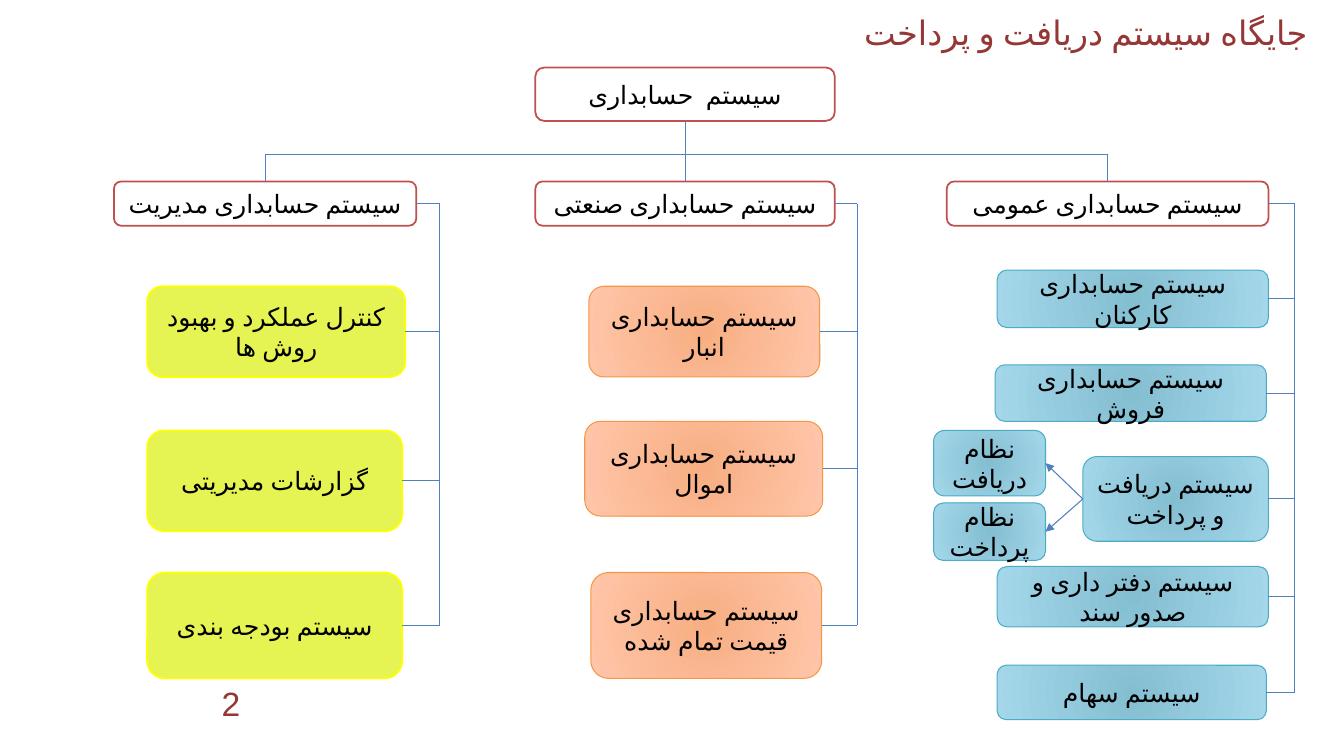
import lxml.etree
import pptx
import pptx.dml.color
import pptx.enum.shapes
import pptx.enum.text
import pptx.oxml.ns
import pptx.util
from pptx.util import Inches

qn = pptx.oxml.ns.qn
ALIGN = pptx.enum.text.PP_ALIGN
ANCHOR = pptx.enum.text.MSO_ANCHOR
TOP, LEFT, BOTTOM, RIGHT = range(4)

WHITE = (("FFFFFF",), "C0504D", 1.25)
BLUE = (("84BED1", "A4D7EA"), "4BACC6", 0.75)
ORANGE = (("F8AE82", "FFC6AA"), "F79646", 0.75)
YELLOW = (("E5F452",), "FFFF00", 1.25)

ROOT = ("سیستم  حسابداری", 5.31, 0.67, 2.97, 0.53)
BRANCHES = [
    (("سیستم حسابداری مدیریت", 1.13, 1.8, 3, 0.44), 4.36, YELLOW, [
        ("کنترل عملکرد و بهبود روش ها", 1.46, 2.84, 2.56, 0.9),
        ("گزارشات مدیریتی", 1.46, 4.27, 2.53, 1),
        ("سیستم بودجه بندی", 1.46, 5.68, 2.53, 1.05),
    ]),
    (("سیستم حسابداری صنعتی", 5.31, 1.8, 2.97, 0.44), 8.5, ORANGE, [
        ("سیستم حسابداری انبار", 5.84, 2.84, 2.29, 0.9),
        ("سیستم حسابداری اموال", 5.8, 4.18, 2.36, 0.94),
        ("سیستم حسابداری قیمت تمام شده", 5.86, 5.68, 2.29, 1.05),
    ]),
    (("سیستم حسابداری عمومی", 9.39, 1.8, 3.19, 0.44), 12.84, BLUE, [
        ("سیستم حسابداری کارکنان", 9.89, 2.68, 2.69, 0.57),
        ("سیستم حسابداری فروش", 9.87, 3.62, 2.69, 0.56),
        ("سیستم دریافت و پرداخت", 10.74, 4.53, 1.84, 0.84),
        ("سیستم دفتر داری و صدور سند", 9.89, 5.62, 2.69, 0.6),
        ("سیستم سهام", 9.89, 6.6, 2.67, 0.54),
    ]),
]
PAYMENT_PARTS = [
    ("نظام دریافت", 9.26, 4.27, 1.11, 0.65),
    ("نظام پرداخت", 9.26, 4.99, 1.11, 0.57),
]


def rgb(value):
    """Turn a hex string into a colour."""
    return pptx.dml.color.RGBColor.from_string(value)


def set_text(sp, text, size, font, color, align, rtl=True):
    """Write one formatted paragraph into a shape."""
    tf = sp.text_frame
    tf.word_wrap = True
    tf.text = text
    p = tf.paragraphs[0]
    p.alignment = align
    r = p.runs[0]
    r.font.size = pptx.util.Pt(size)
    r.font.name = font
    r.font.color.rgb = rgb(color)
    if rtl:
        p._p.get_or_add_pPr().set("rtl", "1")
        r._r.get_or_add_rPr().set("lang", "fa-IR")
    return tf


def set_fill(sp, colors):
    """Fill a shape with one colour, or radially from the first to the second."""
    if len(colors) == 1:
        sp.fill.solid()
        sp.fill.fore_color.rgb = rgb(colors[0])
        return
    sp.fill.gradient()
    for stop, color in zip(sp.fill.gradient_stops, colors):
        stop.color.rgb = rgb(color)
    grad = sp._element.spPr.find(qn("a:gradFill"))
    grad.remove(grad.find(qn("a:lin")))
    circle = lxml.etree.SubElement(grad, qn("a:path"), path="circle")
    lxml.etree.SubElement(circle, qn("a:fillToRect"), dict.fromkeys("ltrb", "50000"))


def add_box(s, item, style, font="Calibri"):
    """Add a rounded box with centred text."""
    text, *place = item
    colors, outline, width = style
    kind = pptx.enum.shapes.MSO_SHAPE.ROUNDED_RECTANGLE
    sp = s.shapes.add_shape(kind, *map(Inches, place))
    sp.shadow.inherit = False
    set_fill(sp, colors)
    sp.line.color.rgb = rgb(outline)
    sp.line.width = pptx.util.Pt(width)
    tf = set_text(sp, text, 18, font, "000000", ALIGN.CENTER)
    tf.vertical_anchor = ANCHOR.MIDDLE
    return sp


def side(sp, site):
    """Return the middle of one side of a shape."""
    dx, dy = [(1, 0), (0, 1), (1, 2), (2, 1)][site]
    return sp.left + sp.width * dx // 2, sp.top + sp.height * dy // 2


def add_line(s, start, end, start_join=None, end_join=None, arrow=False):
    """Add a straight connector, joined to (shape, site) pairs where given."""
    kind = pptx.enum.shapes.MSO_CONNECTOR.STRAIGHT
    cxn = s.shapes.add_connector(kind, *start, *end)
    if start_join:
        cxn.begin_connect(*start_join)
    if end_join:
        cxn.end_connect(*end_join)
    cxn.line.color.rgb = rgb("4F81BD")
    cxn.line.width = pptx.util.Pt(0.75)
    if arrow:
        lxml.etree.SubElement(cxn.line._get_or_add_ln(), qn("a:tailEnd"), type="triangle")
    lxml.etree.SubElement(cxn._element.spPr, qn("a:effectLst"))


def add_branch(s, head, trunk, style, items):
    """Add a heading with its boxes hung on a vertical trunk."""
    top = add_box(s, head, WHITE)
    boxes = [add_box(s, item, style) for item in items]
    x = Inches(trunk)
    for sp in [top, *boxes]:
        start = side(sp, RIGHT)
        add_line(s, start, (x, start[1]), (sp, RIGHT))
    add_line(s, (x, side(top, RIGHT)[1]), (x, side(boxes[-1], RIGHT)[1]))
    return top, boxes


def add_title(s, text):
    """Place and format the title."""
    sp = s.shapes.title
    sp.left, sp.top, sp.width, sp.height = map(Inches, (0.79, 0.11, 12.33, 0.5))
    tf = set_text(sp, text, 24, "Arial", "953735", ALIGN.RIGHT)
    tf.vertical_anchor = ANCHOR.TOP
    tf.margin_top = tf.margin_bottom = Inches(0.05)
    tf.margin_right = Inches(0.15)
    tf.paragraphs[0].line_spacing = 0.9


def add_page_number(s, text):
    """Add the page number at the foot."""
    sp = s.shapes.add_textbox(*map(Inches, (1.99, 6.73, 0.6, 0.5)))
    tf = set_text(sp, text, 24, "Arial", "953735", ALIGN.CENTER, rtl=False)
    tf.vertical_anchor = ANCHOR.MIDDLE


def main():
    """Build the slide and save it."""
    prs = pptx.Presentation()
    prs.slide_width, prs.slide_height = Inches(13.33), Inches(7.5)
    s = prs.slides.add_slide(prs.slide_layouts[5])
    add_title(s, "جایگاه سیستم دریافت و پرداخت")

    root = add_box(s, ROOT, WHITE, "Arial")
    branches = [add_branch(s, *branch) for branch in BRANCHES]
    bus = Inches(1.53)
    start = side(root, BOTTOM)
    add_line(s, start, (start[0], bus), (root, BOTTOM))
    ends = [side(head, TOP) for head, boxes in branches]
    add_line(s, (ends[0][0], bus), (ends[-1][0], bus))
    for (head, boxes), end in zip(branches, ends):
        add_line(s, (end[0], bus), end, end_join=(head, TOP))

    payment = branches[-1][1][2]
    for item in PAYMENT_PARTS:
        sp = add_box(s, item, BLUE)
        add_line(s, side(payment, LEFT), side(sp, RIGHT),
                 (payment, LEFT), (sp, RIGHT), arrow=True)

    add_page_number(s, "2")
    prs.save("out.pptx")


if __name__ == "__main__":
    main()
